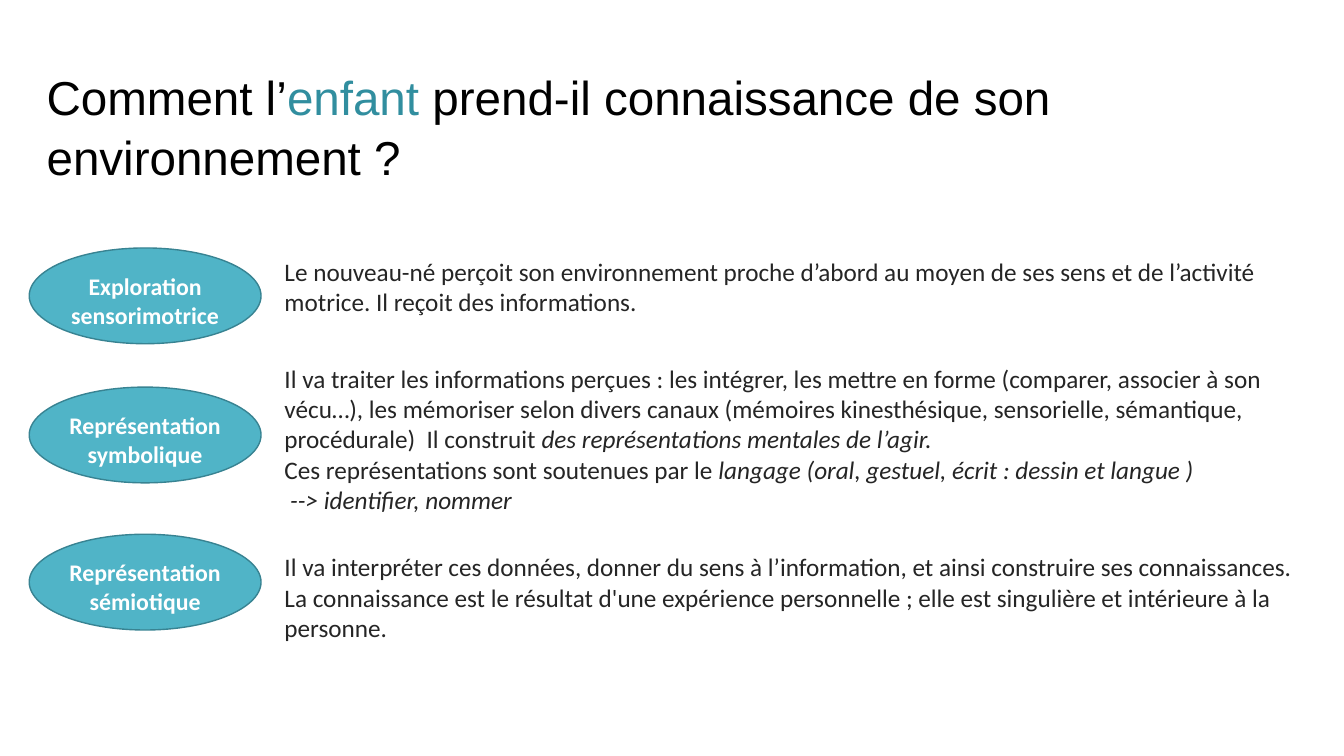
from dataclasses import dataclass

from pptx import Presentation
from pptx.dml.color import RGBColor
from pptx.enum.shapes import MSO_SHAPE
from pptx.enum.text import MSO_ANCHOR, PP_ALIGN
from pptx.util import Pt


@dataclass(frozen=True)
class Theme:
    black: str = "000000"
    teal: str = "318E9F"
    ink: str = "252525"
    white: str = "FFFFFF"
    fill: str = "50B4C7"
    edge: str = "388392"
    head: str = "Arial"
    body: str = "Calibri"
    head_size: float = 34
    body_size: float = 18
    label_size: float = 17


theme = Theme()

TITLE = [
    ("Comment l’", theme.black),
    ("enfant ", theme.teal),
    ("prend-il connaissance de son environnement ?", theme.black),
]

# Each stage: oval top, label lines, text top, text height, paragraphs of (text, italic).
STAGES = [
    (177.1, ["Exploration", "sensorimotrice"], 182.2, 44.6, [
        [("Le nouveau-né perçoit son environnement proche d’abord au moyen de ses "
          "sens et de l’activité motrice. Il reçoit des informations.", False)],
    ]),
    (276.5, ["Représentation", "symbolique"], 258.5, 110.2, [
        [("Il va traiter les informations perçues : les intégrer, les mettre en forme "
          "(comparer, associer à son vécu…), les mémoriser selon divers canaux "
          "(mémoires kinesthésique, sensorielle, sémantique, procédurale)  "
          "Il construit ", False),
         ("des représentations mentales de l’agir.", True)],
        [("Ces représentations sont soutenues par le ", False),
         ("langage (oral, gestuel, écrit : dessin et langue )\n --> identifier, nommer",
          True)],
    ]),
    (381.6, ["Représentation", "sémiotique"], 393.1, 66.2, [
        [("Il va interpréter ces données, donner du sens à l’information, et ainsi "
          "construire ses connaissances.", False)],
        [("La connaissance est le résultat d'une expérience personnelle ; elle est "
          "singulière et intérieure à la personne.", False)],
    ]),
]

OVAL_LEFT, OVAL_WIDTH, OVAL_HEIGHT = 20.9, 165.6, 68.4
TEXT_LEFT, TEXT_WIDTH = 202.3, 724.5


def rgb(color):
    return RGBColor.from_string(color)


def set_frame(frame, left=0.9, top=0.9, wrap=True):
    frame.margin_left, frame.margin_top = Pt(left), Pt(top)
    frame.margin_right = frame.margin_bottom = 0
    frame.word_wrap = wrap
    return frame


def add_run(para, text, name, size, color, bold=False, italic=False):
    """Add text to a paragraph, with a line break at each newline."""
    for i, line in enumerate(text.split("\n")):
        if i:
            para.add_line_break()
        run = para.add_run()
        run.text = line
        font = run.font
        font.name, font.size = name, Pt(size)
        font.bold, font.italic = bold, italic
        font.color.rgb = rgb(color)


def next_para(frame, i):
    return frame.add_paragraph() if i else frame.paragraphs[0]


def add_title(slide):
    title = slide.shapes.title
    title.left, title.top = Pt(32.4), Pt(46.8)
    title.width, title.height = Pt(894.4), Pt(83.5)
    frame = set_frame(title.text_frame)
    frame.vertical_anchor = MSO_ANCHOR.MIDDLE
    para = frame.paragraphs[0]
    para.alignment = PP_ALIGN.LEFT
    para.line_spacing = 1.05
    for text, color in TITLE:
        add_run(para, text, theme.head, theme.head_size, color)


def add_oval(slide, top, lines):
    oval = slide.shapes.add_shape(MSO_SHAPE.OVAL, Pt(OVAL_LEFT), Pt(top),
                                  Pt(OVAL_WIDTH), Pt(OVAL_HEIGHT))
    oval.shadow.inherit = False
    oval.fill.solid()
    oval.fill.fore_color.rgb = rgb(theme.fill)
    oval.line.color.rgb = rgb(theme.edge)
    oval.line.width = Pt(1)
    frame = set_frame(oval.text_frame, left=0, top=6.5, wrap=False)
    frame.vertical_anchor = MSO_ANCHOR.MIDDLE
    for i, line in enumerate(lines):
        para = next_para(frame, i)
        para.alignment = PP_ALIGN.CENTER
        add_run(para, line, theme.body, theme.label_size, theme.white, bold=True)


def add_text(slide, top, height, paras):
    box = slide.shapes.add_textbox(Pt(TEXT_LEFT), Pt(top), Pt(TEXT_WIDTH), Pt(height))
    frame = set_frame(box.text_frame)
    for i, runs in enumerate(paras):
        para = next_para(frame, i)
        for text, italic in runs:
            add_run(para, text, theme.body, theme.body_size, theme.ink, italic=italic)


def main():
    deck = Presentation()
    deck.slide_width, deck.slide_height = Pt(960), Pt(540)
    slide = deck.slides.add_slide(deck.slide_layouts.get_by_name("Title Only"))
    add_title(slide)
    for oval_top, label, text_top, height, paras in STAGES:
        add_oval(slide, oval_top, label)
        add_text(slide, text_top, height, paras)
    deck.save("out.pptx")


if __name__ == "__main__":
    main()
